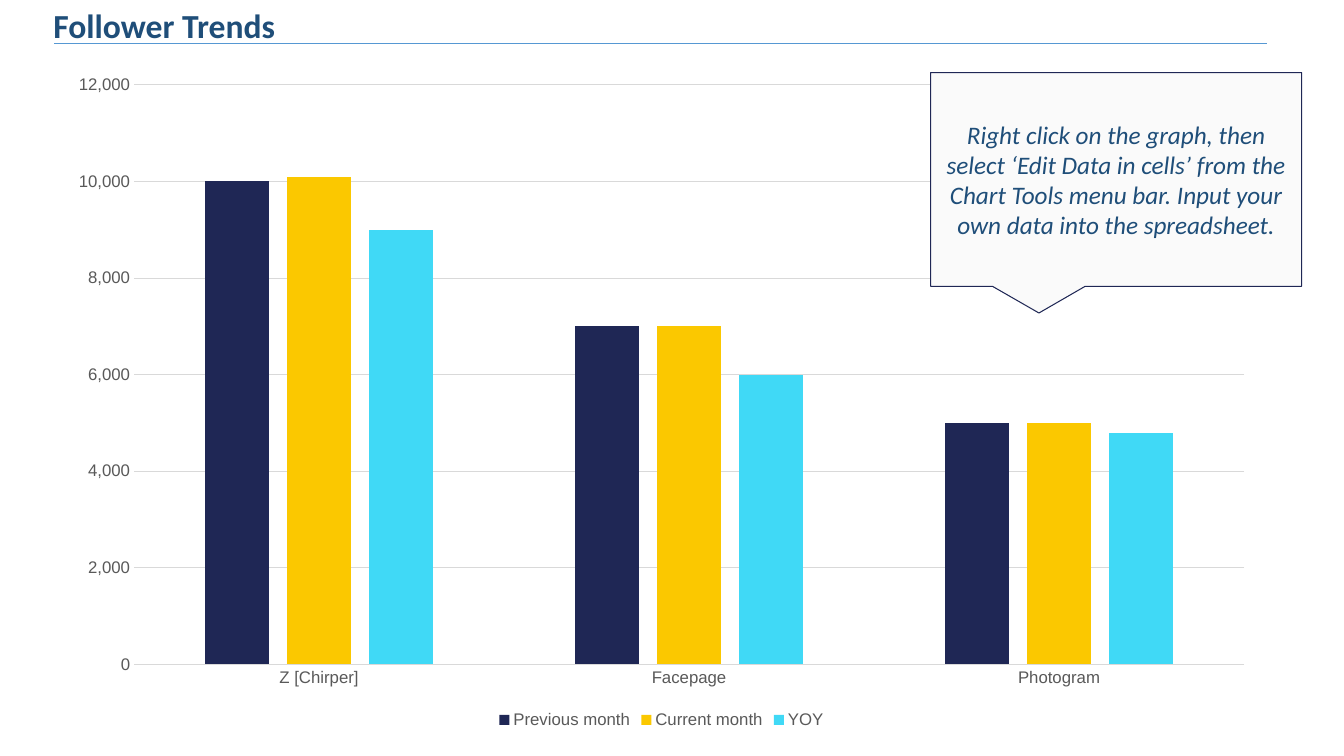
import pptx
import pptx.chart.data
import pptx.dml.color
import pptx.enum.chart
import pptx.enum.shapes
import pptx.enum.text
import pptx.oxml
import pptx.oxml.ns
import pptx.util

Inches = pptx.util.Inches
Pt = pptx.util.Pt
RGBColor = pptx.dml.color.RGBColor

BLUE = RGBColor(0x1F, 0x4E, 0x79)
RULE_BLUE = RGBColor(0x56, 0x98, 0xD3)
NAVY = RGBColor(0x1F, 0x27, 0x55)
YELLOW = RGBColor(0xFB, 0xC8, 0x00)
CYAN = RGBColor(0x40, 0xD9, 0xF6)
GREY = RGBColor(0x59, 0x59, 0x59)
GRID_GREY = RGBColor(0xD9, 0xD9, 0xD9)
PALE = RGBColor(0xFA, 0xFA, 0xFA)

PLATFORMS = ["Z [Chirper]", "Facepage", "Photogram"]
FOLLOWERS = [
    ("Previous month", [10000, 7000, 5000], NAVY),
    ("Current month", [10100, 7000, 5000], YELLOW),
    ("YOY", [9000, 6000, 4800], CYAN),
]


def style_font(font, size, color, name):
    font.size = Pt(size)
    font.color.rgb = color
    font.name = name


def style_line(line, color):
    line.color.rgb = color
    line.width = Pt(0.75)


def add_title(page, text):
    box = page.shapes.add_textbox(Inches(0), Inches(0.04), Inches(13.33), Inches(0.48))
    frame = box.text_frame
    frame.word_wrap = True
    frame.margin_left = Inches(0.53)
    para = frame.paragraphs[0]
    para.text = text
    para.line_spacing = 0.9
    style_font(para.font, 24, BLUE, "Calibri")
    para.font.bold = True


def add_rule(page):
    rule = page.shapes.add_connector(
        pptx.enum.shapes.MSO_CONNECTOR.STRAIGHT,
        Inches(0.54), Inches(0.43), Inches(12.57), Inches(0.43))
    style_line(rule.line, RULE_BLUE)
    # An empty effect list removes the theme shadow
    rule._element.spPr.append(pptx.oxml.parse_xml(
        "<a:effectLst %s/>" % pptx.oxml.ns.nsdecls("a")))


def add_follower_chart(page):
    data = pptx.chart.data.CategoryChartData(number_format="#,##0")
    data.categories = PLATFORMS
    for name, values, _ in FOLLOWERS:
        data.add_series(name, values)
    chart = page.shapes.add_chart(
        pptx.enum.chart.XL_CHART_TYPE.COLUMN_CLUSTERED,
        Inches(0.54), Inches(0.62), Inches(12.04), Inches(6.65), data).chart
    chart.has_title = False
    style_font(chart.font, 12, GREY, "Arial")

    # Columns
    plot = chart.plots[0]
    plot.gap_width = 219
    plot.overlap = -27
    plot.vary_by_categories = False
    for series, (_, _, color) in zip(plot.series, FOLLOWERS):
        series.format.fill.solid()
        series.format.fill.fore_color.rgb = color

    # Axes
    for axis in (chart.category_axis, chart.value_axis):
        axis.major_tick_mark = pptx.enum.chart.XL_TICK_MARK.NONE
        axis.minor_tick_mark = pptx.enum.chart.XL_TICK_MARK.NONE
        style_font(axis.tick_labels.font, 12, GREY, "Arial")
    style_line(chart.category_axis.format.line, GRID_GREY)
    scale = chart.value_axis
    scale.minimum_scale = 0
    scale.maximum_scale = 12000
    scale.major_unit = 2000
    scale.tick_labels.number_format = "#,##0"
    scale.tick_labels.number_format_is_linked = False
    scale.format.line.fill.background()
    style_line(scale.major_gridlines.format.line, GRID_GREY)

    # Legend
    chart.has_legend = True
    chart.legend.position = pptx.enum.chart.XL_LEGEND_POSITION.BOTTOM
    chart.legend.include_in_layout = False
    style_font(chart.legend.font, 12, GREY, "Arial")


def add_callout(page, text):
    callout = page.shapes.add_shape(
        pptx.enum.shapes.MSO_SHAPE.RECTANGULAR_CALLOUT,
        Inches(9.23), Inches(0.72), Inches(3.68), Inches(2.12))
    callout.adjustments[0] = -0.208
    callout.adjustments[1] = 0.625
    callout.shadow.inherit = False
    callout.fill.solid()
    callout.fill.fore_color.rgb = PALE
    style_line(callout.line, NAVY)
    frame = callout.text_frame
    frame.word_wrap = True
    frame.vertical_anchor = pptx.enum.text.MSO_ANCHOR.MIDDLE
    para = frame.paragraphs[0]
    para.text = text
    para.alignment = pptx.enum.text.PP_ALIGN.CENTER
    style_font(para.font, 18, BLUE, "Calibri")
    para.font.italic = True


def main():
    deck = pptx.Presentation()
    deck.slide_width = Inches(13.33)
    deck.slide_height = Inches(7.5)
    page = deck.slides.add_slide(deck.slide_layouts[6])
    add_title(page, "Follower Trends")
    add_rule(page)
    add_follower_chart(page)
    add_callout(page, "Right click on the graph, then select ‘Edit Data in cells’ from the "
                      "Chart Tools menu bar. Input your own data into the spreadsheet.")
    deck.save("out.pptx")


if __name__ == "__main__":
    main()
